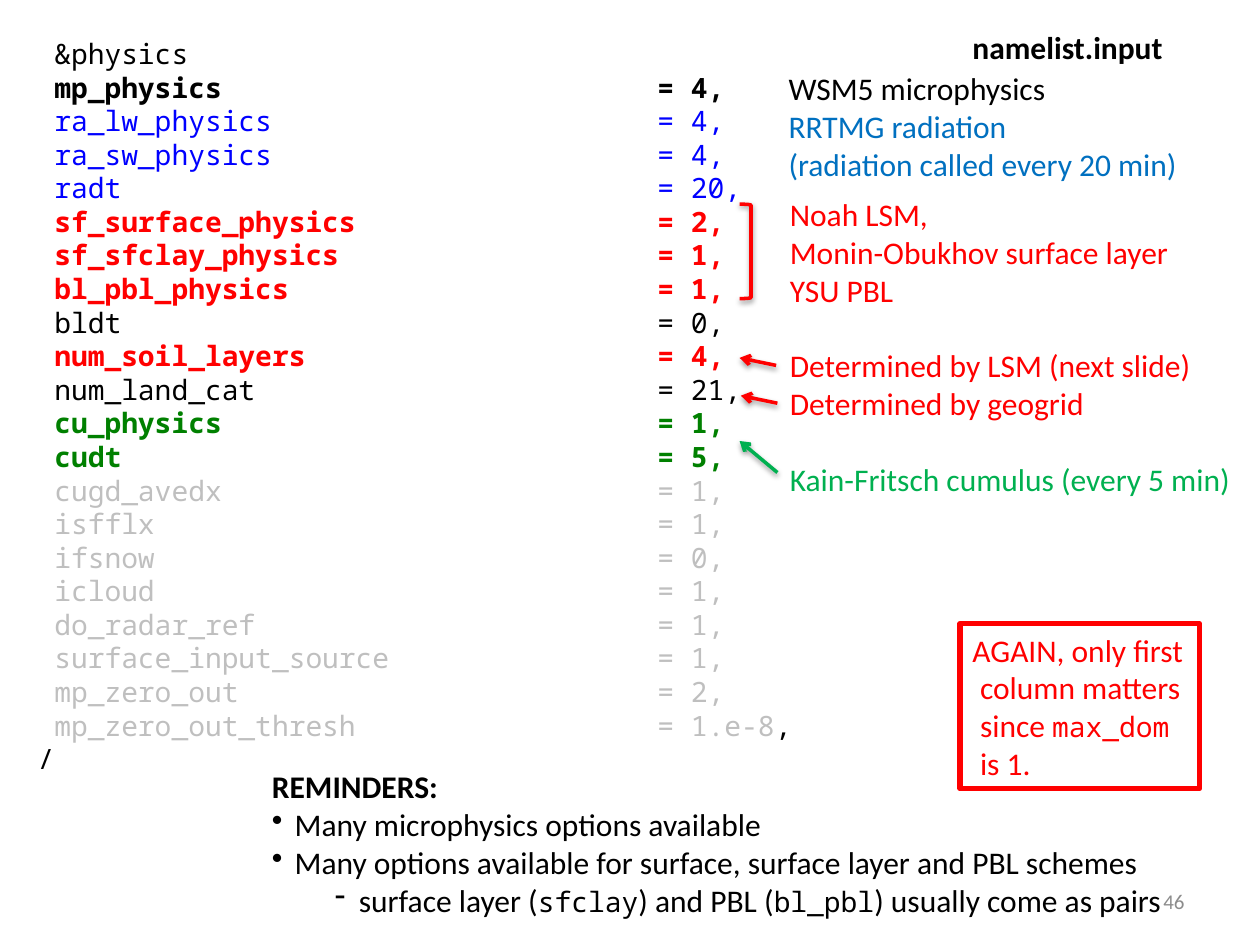
import pptx
import pptx.dml.color
import pptx.enum.shapes
import pptx.enum.text
import pptx.oxml
import pptx.oxml.ns
import pptx.util
from dataclasses import dataclass


@dataclass(frozen=True)
class Theme:
    sans: str = "Calibri"
    mono: str = "Noto Sans Mono"
    body: int = 18
    code: int = 16
    foot: int = 12
    lead: float = 1.2
    black: str = "000000"
    red: str = "FF0000"
    blue: str = "0000FF"
    sky: str = "0070C0"
    green: str = "008000"
    lime: str = "00B050"
    pale: str = "BFBFBF"
    gray: str = "8C8C8C"


T = Theme()
WIDE = pptx.util.Inches(10)
HIGH = pptx.util.Inches(7.5)
SHAPE = pptx.enum.shapes.MSO_SHAPE

ROWS = [
    ("mp_physics", "4", T.black, True),
    ("ra_lw_physics", "4", T.blue, False),
    ("ra_sw_physics", "4", T.blue, False),
    ("radt", "20", T.blue, False),
    ("sf_surface_physics", "2", T.red, True),
    ("sf_sfclay_physics", "1", T.red, True),
    ("bl_pbl_physics", "1", T.red, True),
    ("bldt", "0", T.black, False),
    ("num_soil_layers", "4", T.red, True),
    ("num_land_cat", "21", T.black, False),
    ("cu_physics", "1", T.green, True),
    ("cudt", "5", T.green, True),
    ("cugd_avedx", "1", T.pale, False),
    ("isfflx", "1", T.pale, False),
    ("ifsnow", "0", T.pale, False),
    ("icloud", "1", T.pale, False),
    ("do_radar_ref", "1", T.pale, False),
    ("surface_input_source", "1", T.pale, False),
    ("mp_zero_out", "2", T.pale, False),
]


def across(share):
    return round(WIDE * share / 100)


def down(share):
    return round(HIGH * share / 100)


def place(x, y, w, h):
    return across(x), down(y), across(w), down(h)


def tint(hue):
    return pptx.dml.color.RGBColor.from_string(hue)


def node(tag, inner="", **attrs):
    space = pptx.oxml.ns.nsdecls("a")
    pairs = " ".join(f'{key}="{val}"' for key, val in attrs.items())
    return pptx.oxml.parse_xml(f"<a:{tag} {space} {pairs}>{inner}</a:{tag}>")


def style(run, hue, size=T.body, face=T.sans, bold=False):
    run.font.name = face
    run.font.size = pptx.util.Pt(size)
    run.font.bold = bold
    run.font.color.rgb = tint(hue)


def line(frame, text, hue=T.black, size=T.body, face=T.sans, bold=False, gap=0):
    para = frame.paragraphs[-1]
    if para.runs:
        para = frame.add_paragraph()
    para.text = text
    para.alignment = pptx.enum.text.PP_ALIGN.LEFT
    para.line_spacing = pptx.util.Pt(size * T.lead)
    para.space_before = pptx.util.Pt(gap * size * T.lead)
    style(para.runs[0], hue, size, face, bold)
    return para


def more(para, text, hue=T.black, size=T.body, face=T.sans):
    run = para.add_run()
    run.text = text
    style(run, hue, size, face)


def dent(para, left, first=0, mark=None):
    props = para._p.get_or_add_pPr()
    props.set("marL", str(pptx.util.Inches(left)))
    props.set("indent", str(pptx.util.Inches(first)))
    if mark:
        props.append(node("buChar", char=mark))


def note(slide, spot, wrap=False):
    frame = slide.shapes.add_textbox(*place(*spot)).text_frame
    frame.word_wrap = wrap
    return frame


def shade(item):
    glow = (f'<a:outerShdw blurRad="{pptx.util.Pt(3.1)}" dist="{pptx.util.Pt(1.6)}" '
            'dir="5400000" rotWithShape="0"><a:srgbClr val="000000">'
            '<a:alpha val="38000"/></a:srgbClr></a:outerShdw>')
    item._element.spPr.append(node("effectLst", glow))


def frame_up(slide, kind, spot, weight):
    item = slide.shapes.add_shape(kind, *place(*spot))
    item.fill.background()
    item.line.color.rgb = tint(T.red)
    item.line.width = pptx.util.Pt(weight)
    return item


def arrow(slide, start, end, hue):
    straight = pptx.enum.shapes.MSO_CONNECTOR.STRAIGHT
    item = slide.shapes.add_connector(
        straight, across(start[0]), down(start[1]), across(end[0]), down(end[1]))
    item.line.color.rgb = tint(hue)
    item.line.width = pptx.util.Pt(2)
    item.line._get_or_add_ln().append(node("tailEnd", type="arrow"))
    shade(item)


def code(slide):
    frame = note(slide, (2, 3.2, 62.6, 80.27), True)
    look = {"size": T.code, "face": T.mono}
    line(frame, " &physics", **look)
    last = ("mp_zero_out_thresh", "1.e-8", T.pale, False)
    for name, value, hue, bold in ROWS + [last]:
        tail = "" if name == last[0] else ","
        para = line(frame, f" {name}\t= {value}{tail}", hue, bold=bold, **look)
        stop = f'<a:tab pos="{pptx.util.Inches(4.92)}" algn="l"/>'
        para._p.get_or_add_pPr().append(node("tabLst", stop))
    more(para, ",", **look)
    line(frame, "/", **look)


def remind(slide):
    frame = note(slide, (20.6, 80.53, 74.5, 17.47))
    line(frame, "REMINDERS:", bold=True)
    for text in ("Many microphysics options available",
                 "Many options available for surface, surface layer and PBL schemes"):
        dent(line(frame, text), 0.18, -0.18, "•")
    para = line(frame, "surface layer (")
    more(para, "sfclay", size=T.code, face=T.mono)
    more(para, ") and PBL (")
    more(para, "bl_pbl", size=T.code, face=T.mono)
    more(para, ") usually come as pairs")
    dent(para, 0.69, -0.19, "-")


def warn(slide):
    item = frame_up(slide, SHAPE.RECTANGLE, (76.2, 66, 19, 17.47), 3)
    item.shadow.inherit = False
    frame = item.text_frame
    frame.word_wrap = False
    line(frame, "AGAIN, only first", T.red)
    for text in ("column matters", "since ", "is 1."):
        para = line(frame, text, T.red)
        dent(para, 0.06)
        if text == "since ":
            more(para, "max_dom", T.red, T.code, T.mono)


def label(slide):
    line(note(slide, (76.2, 2.27, 17.3, 5.33)), "namelist.input", bold=True)
    top = note(slide, (61.6, 6.67, 33.2, 13.47))
    line(top, "WSM5 microphysics")
    line(top, "RRTMG radiation", T.sky)
    line(top, "(radiation called every 20 min)", T.sky)
    side = note(slide, (61.7, 20, 37.4, 33.6))
    for text, hue, gap in (
            ("Noah LSM,", T.red, 0),
            ("Monin-Obukhov surface layer", T.red, 0),
            ("YSU PBL", T.red, 0),
            ("Determined by LSM (next slide)", T.red, 1),
            ("Determined by geogrid", T.red, 0),
            ("Kain-Fritsch cumulus (every 5 min)", T.lime, 1)):
        line(side, text, hue, gap=gap)
    foot = note(slide, (71.7, 92.67, 23.3, 5.33), True)
    foot.vertical_anchor = pptx.enum.text.MSO_ANCHOR.MIDDLE
    line(foot, "46", T.gray, T.foot).alignment = pptx.enum.text.PP_ALIGN.RIGHT


def main():
    deck = pptx.Presentation()
    deck.slide_width, deck.slide_height = WIDE, HIGH
    slide = deck.slides.add_slide(deck.slide_layouts[6])
    remind(slide)
    warn(slide)
    code(slide)
    label(slide)
    shade(frame_up(slide, SHAPE.RIGHT_BRACKET, (58.7, 21.6, 0.9, 10), 2))
    arrow(slide, (61.6, 38.67), (58.7, 37.87), T.red)
    arrow(slide, (61.7, 42.67), (58.8, 41.87), T.red)
    arrow(slide, (61.7, 50), (58.7, 46.67), T.lime)
    deck.save("out.pptx")


if __name__ == "__main__":
    main()
